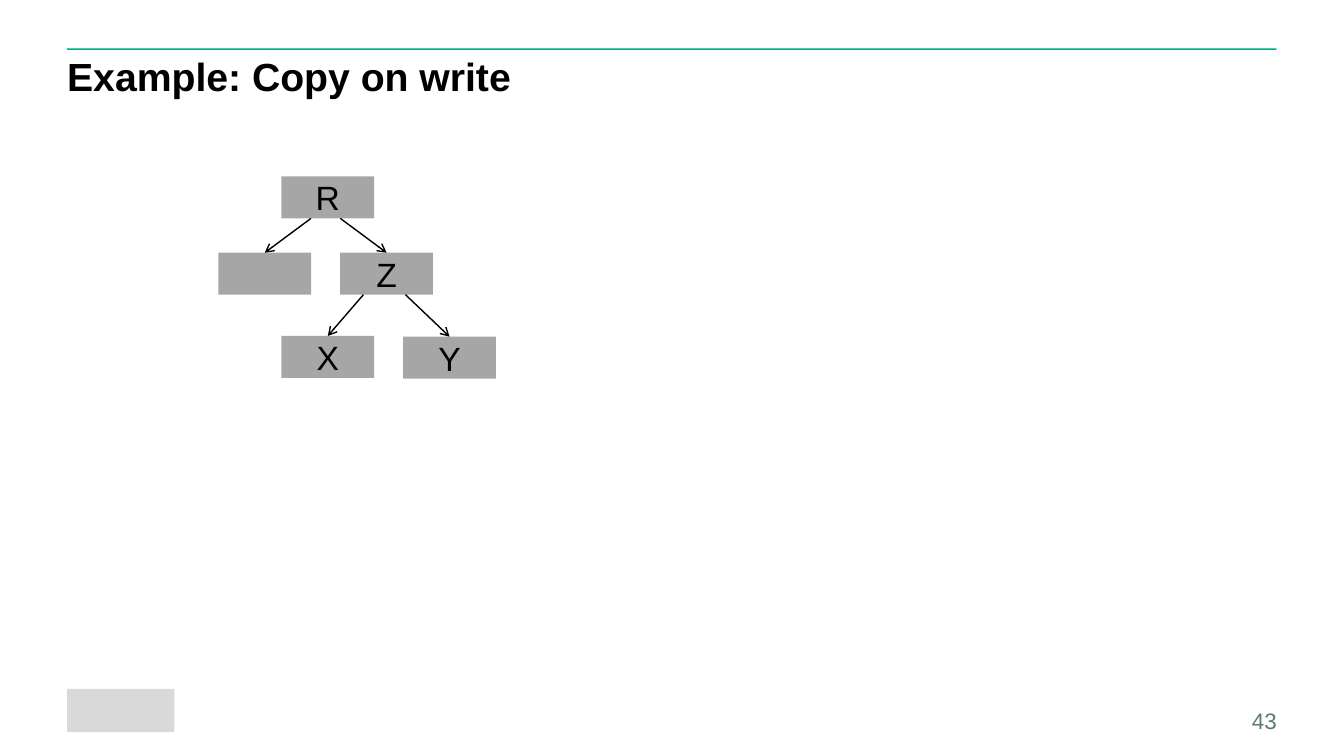
from pptx import Presentation
from pptx import util as u
from pptx.dml.color import RGBColor
from pptx.enum import shapes, text
from pptx.oxml.ns import qn
from lxml import etree

BLACK = RGBColor(0x00, 0x00, 0x00)
GREEN = RGBColor(0x01, 0xA9, 0x82)
NODE_GREY = RGBColor(0xA6, 0xA6, 0xA6)
MARK_GREY = RGBColor(0xD9, 0xD9, 0xD9)
NUMBER_GREY = RGBColor(0x5F, 0x7A, 0x76)

NODE_WIDTH, NODE_HEIGHT = 66.25, 30
NODES = {
    "root": ("R", 201, 126),
    "right": ("Z", 243, 180.5),
    "left": ("", 156, 180.5),
    "x": ("X", 201, 240),
    "y": ("Y", 288, 240.5),
}
BRANCHES = [
    ("root", "right", 9),
    ("root", "left", -12),
    ("right", "x", -16.5),
    ("right", "y", 13.5),
]


def write(frame, words, size, color, align, bold=False):
    """Put one formatted paragraph into a text frame."""
    paragraph = frame.paragraphs[0]
    paragraph.alignment = align
    run = paragraph.add_run()
    run.text = words
    run.font.color.rgb = color
    for name, value in {"name": "Arial", "size": u.Pt(size), "bold": bold}.items():
        setattr(run.font, name, value)
    return paragraph


def add_block(slide, left, top, width, height, color):
    """Add a plain filled rectangle."""
    block = slide.shapes.add_shape(
        shapes.MSO_SHAPE.RECTANGLE, u.Pt(left), u.Pt(top), u.Pt(width), u.Pt(height))
    block.shadow.inherit = False
    block.fill.solid()
    block.fill.fore_color.rgb = color
    block.line.fill.background()
    return block


def add_node(slide, label, left, top):
    """Add a tree node, with its label if it has one."""
    node = add_block(slide, left, top, NODE_WIDTH, NODE_HEIGHT, NODE_GREY)
    if label:
        node.text_frame.vertical_anchor = text.MSO_ANCHOR.MIDDLE
        write(node.text_frame, label, 24, BLACK, text.PP_ALIGN.CENTER)
    return node


def add_branch(slide, parent, child, offset):
    """Add an arrow from a parent's bottom edge to the top of its child."""
    start_x = parent.left + parent.width // 2 + u.Pt(offset)
    branch = slide.shapes.add_connector(
        shapes.MSO_CONNECTOR.STRAIGHT, start_x, parent.top + parent.height,
        child.left + child.width // 2, child.top)
    branch.end_connect(child, 0)
    branch.line.color.rgb = BLACK
    branch.line.width = u.Pt(1)
    etree.SubElement(branch.line._get_or_add_ln(), qn("a:tailEnd"), type="arrow")
    etree.SubElement(branch._element.spPr, qn("a:effectLst"))


def add_words(slide, box, words, size, color, align, bold=False, **layout):
    """Add a text box without margins."""
    frame = slide.shapes.add_textbox(*map(u.Pt, box)).text_frame
    margins = dict.fromkeys(
        ("margin_left", "margin_top", "margin_right", "margin_bottom"), 0)
    for name, value in {**margins, **layout}.items():
        setattr(frame, name, value)
    return write(frame, words, size, color, align, bold)


def main():
    """Build and save the slide."""
    deck = Presentation()
    deck.slide_width, deck.slide_height = u.Pt(960), u.Pt(540)
    slide = deck.slides.add_slide(deck.slide_layouts[6])

    add_block(slide, 47.75, 34.5, 864, 1.25, GREEN)
    add_block(slide, 48, 492, 76.5, 31, MARK_GREY)
    title = add_words(slide, (48, 41, 864, 32.5), "Example: Copy on write", 28, BLACK,
                      text.PP_ALIGN.LEFT, bold=True, word_wrap=True)
    title.line_spacing = 0.9
    add_words(slide, (870, 506, 42, 18), "43", 16, NUMBER_GREY, text.PP_ALIGN.RIGHT,
              word_wrap=False, vertical_anchor=text.MSO_ANCHOR.BOTTOM)

    nodes = {key: add_node(slide, *node) for key, node in NODES.items()}
    for parent, child, offset in BRANCHES:
        add_branch(slide, nodes[parent], nodes[child], offset)

    deck.save("out.pptx")


if __name__ == "__main__":
    main()
